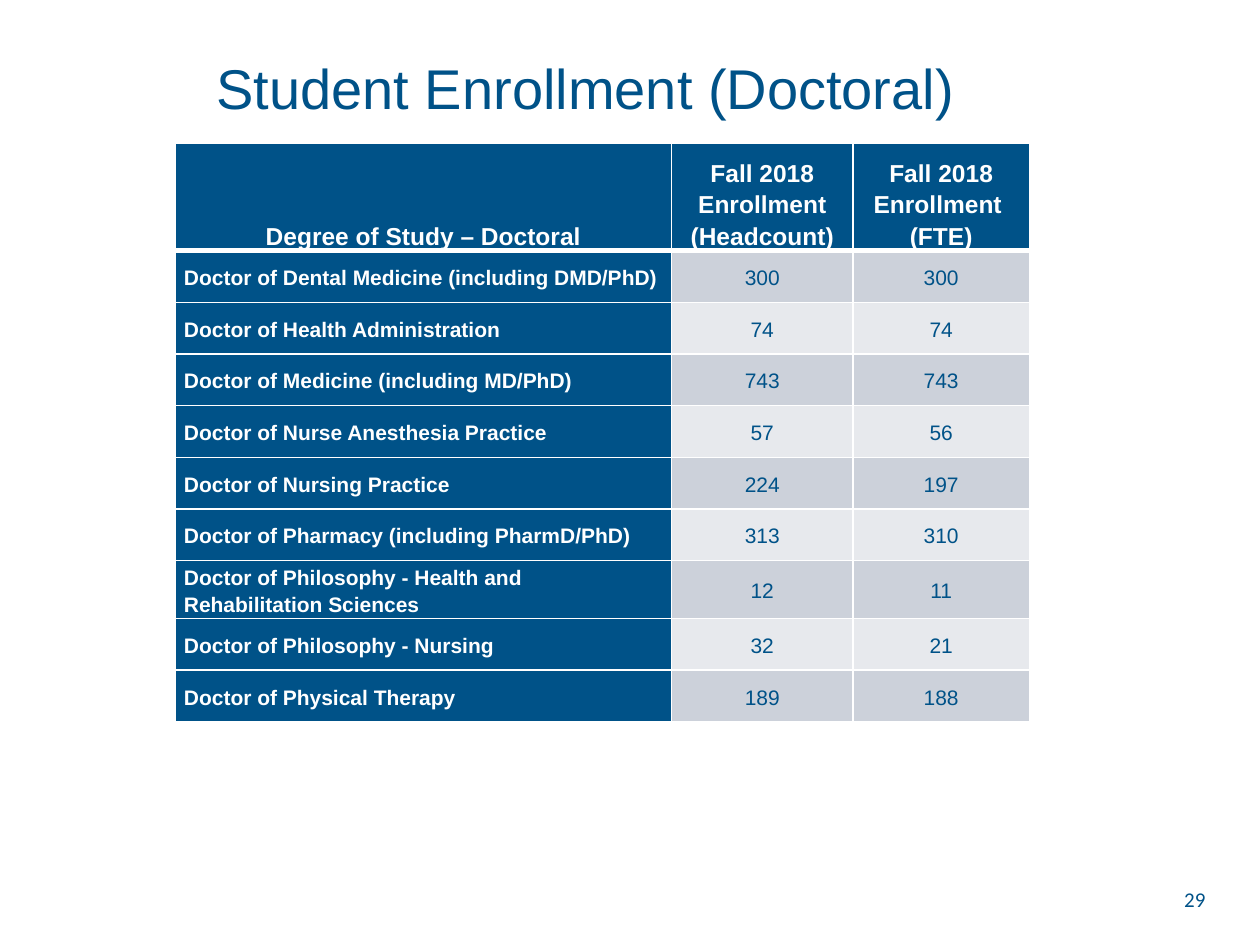
import pptx
import pptx.util
import pptx.dml.color
import pptx.enum.text
import pptx.oxml
import pptx.oxml.ns

TITLE = "Student Enrollment (Doctoral)"
PAGE = "29"
HEAD = ("Degree of Study – Doctoral", "Fall 2018 Enrollment (Headcount)",
        "Fall 2018 Enrollment \v(FTE)")
ROWS = [
    ("Doctor of Dental Medicine (including DMD/PhD)", 300, 300),
    ("Doctor of Health Administration", 74, 74),
    ("Doctor of Medicine (including MD/PhD)", 743, 743),
    ("Doctor of Nurse Anesthesia Practice", 57, 56),
    ("Doctor of Nursing Practice", 224, 197),
    ("Doctor of Pharmacy (including PharmD/PhD)", 313, 310),
    ("Doctor of Philosophy - Health and Rehabilitation Sciences", 12, 11),
    ("Doctor of Philosophy - Nursing", 32, 21),
    ("Doctor of Physical Therapy", 189, 188),
]
COLORS = {"blue": "005288", "white": "FFFFFF", "dark": "CCD1DA", "light": "E7E9ED"}
COLS = (3.94, 1.44, 1.4)
HIGH = (0.85,) + (0.41,) * len(ROWS)

Inch = pptx.util.Inches
Align = pptx.enum.text.PP_ALIGN
Anchor = pptx.enum.text.MSO_ANCHOR


def tint(name):
    return pptx.dml.color.RGBColor.from_string(COLORS[name])


def style(par, size, color="blue", face="Arial", bold=False, align=Align.LEFT):
    par.alignment = align
    font = par.font
    font.size, font.name, font.bold = pptx.util.Pt(size), face, bold
    font.color.rgb = tint(color)


def label(slide, text, box, anchor, **look):
    frame = slide.shapes.add_textbox(*map(Inch, box)).text_frame
    frame.word_wrap = True
    frame.vertical_anchor = anchor
    frame.text = text
    style(frame.paragraphs[0], **look)


def edge(cell, side, width):
    line = pptx.oxml.parse_xml(
        f'<a:ln{side} {pptx.oxml.ns.nsdecls("a")} w="{pptx.util.Pt(width)}">'
        f'<a:solidFill><a:srgbClr val="{COLORS["white"]}"/></a:solidFill></a:ln{side}>')
    cell._tc.get_or_add_tcPr().append(line)


def fill(cell, text, row, col):
    head, side = row == 0, col == 0
    for name in "LRTB":
        thick = (head and name == "B") or (row == 1 and name == "T")
        edge(cell, name, 3 if thick else 1)
    cell.fill.solid()
    band = "dark" if row % 2 else "light"
    cell.fill.fore_color.rgb = tint("blue" if head or side else band)
    cell.margin_left = cell.margin_right = Inch(0.07)
    cell.margin_top = cell.margin_bottom = 0
    cell.vertical_anchor = Anchor.BOTTOM if head else Anchor.MIDDLE
    cell.text = str(text)
    par = cell.text_frame.paragraphs[0]
    par.line_spacing = 1.15
    style(par, 14 if head else 12, "white" if head or side else "blue",
          bold=head or side, align=Align.LEFT if side and not head else Align.CENTER)


def main():
    deck = pptx.Presentation()
    deck.slide_width, deck.slide_height = Inch(10), Inch(7.5)
    slide = deck.slides.add_slide(deck.slide_layouts[6])
    label(slide, TITLE, (0.15, 0.07, 9, 1.25), Anchor.MIDDLE, size=32, align=Align.CENTER)
    label(slide, PAGE, (9.3, 6.99, 0.58, 0.4), Anchor.TOP, size=12, face="Calibri")
    data = [HEAD] + ROWS
    table = slide.shapes.add_table(len(data), len(COLS), Inch(1.39), Inch(1.14),
                                   Inch(sum(COLS)), Inch(sum(HIGH))).table
    for col, width in zip(table.columns, COLS):
        col.width = Inch(width)
    for row, height in zip(table.rows, HIGH):
        row.height = Inch(height)
    for r, line in enumerate(data):
        for c, text in enumerate(line):
            fill(table.cell(r, c), text, r, c)
    deck.save("out.pptx")


if __name__ == "__main__":
    main()
